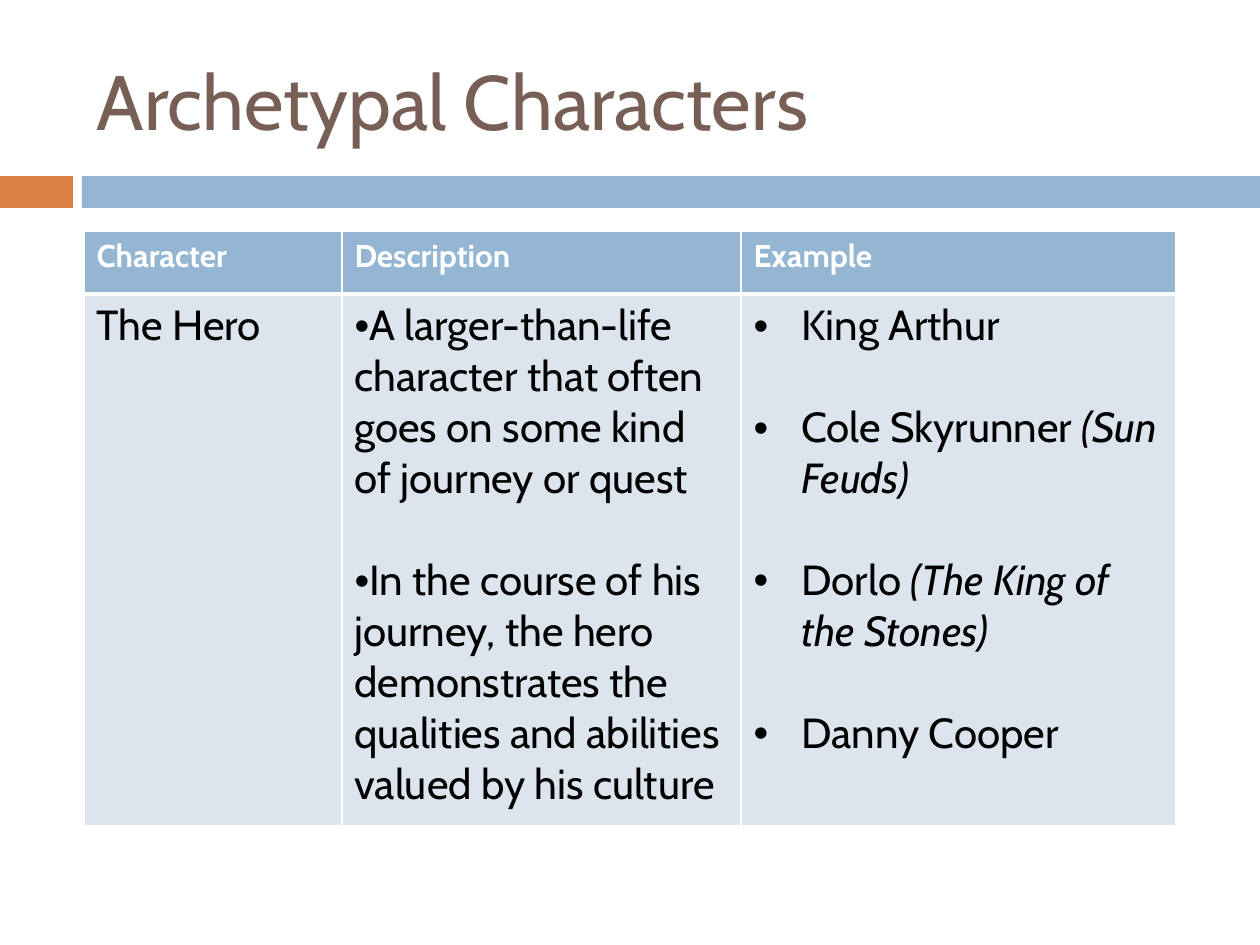
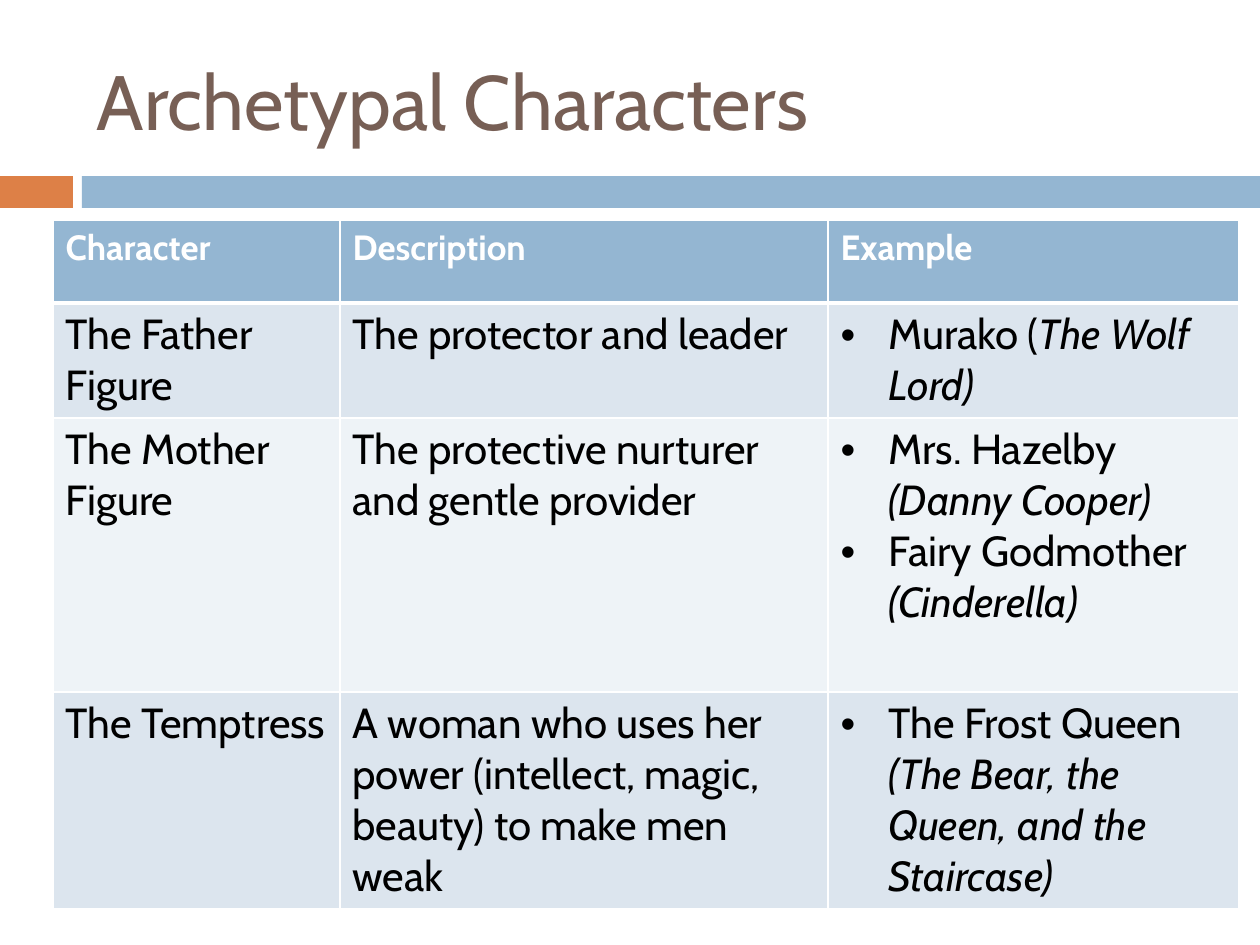
from lxml import etree
from pptx import Presentation
from pptx.dml.color import RGBColor
from pptx.enum.shapes import MSO_SHAPE
from pptx.enum.text import MSO_ANCHOR, MSO_AUTO_SIZE, PP_ALIGN
from pptx.oxml.ns import qn
from pptx.util import Pt

RECT = MSO_SHAPE.RECTANGLE
MIDDLE = MSO_ANCHOR.MIDDLE
LEFT = PP_ALIGN.LEFT
NO_FIT = MSO_AUTO_SIZE.NONE

WHITE = RGBColor(0xFF, 0xFF, 0xFF)
BLACK = RGBColor(0x00, 0x00, 0x00)
BROWN = RGBColor(0x77, 0x5F, 0x55)
ORANGE = RGBColor(0xDD, 0x80, 0x47)
BLUE = RGBColor(0x94, 0xB6, 0xD2)
TINTS = RGBColor(0xDC, 0xE5, 0xEE), RGBColor(0xEE, 0xF3, 0xF7)

FONT = "Cabin"
SCALE = 914400 / 126
HANG = 48
HEADS = ["Character", "Description", "Example"]


def emu(px):
    return round(px * SCALE)


def bullet(para, hang):
    props = para._p.get_or_add_pPr()
    props.set("marL", str(emu(hang)))
    props.set("indent", str(-emu(hang)))
    etree.SubElement(props, qn("a:buFont")).set("typeface", "Arial")
    etree.SubElement(props, qn("a:buChar")).set("char", "•")


def write(frame, paras, size, color, bold=False, bullets=False, hang=0, gap=0):
    """Fill a text frame; words between underscores become italic."""
    for i, text in enumerate(paras):
        para = frame.add_paragraph() if i else frame.paragraphs[0]
        para.alignment = LEFT
        if i and gap:
            para.space_before = Pt(gap)
        if bullets:
            bullet(para, hang)
        for j, part in enumerate(text.split("_")):
            if not part:
                continue
            run = para.add_run()
            run.text = part
            font = run.font
            font.name, font.size, font.bold = FONT, Pt(size), bold
            font.italic = j % 2 == 1
            font.color.rgb = color


def edge(cell, **widths):
    """Draw white cell borders; widths in points by side L, R, T, B."""
    props = cell._tc.get_or_add_tcPr()
    for i, side in enumerate("LRTB"):
        line = etree.Element(qn(f"a:ln{side}"), w=str(Pt(widths.get(side, 1))))
        fill = etree.SubElement(line, qn("a:solidFill"))
        etree.SubElement(fill, qn("a:srgbClr")).set("val", str(WHITE))
        props.insert(i, line)


class Deck:
    def __init__(self, wide, high):
        self.prs = Presentation()
        self.prs.slide_width, self.prs.slide_height = emu(wide), emu(high)
        self.slide = None

    def start(self, title):
        self.slide = self.prs.slides.add_slide(self.prs.slide_layouts[5])
        self.band(0, 73, ORANGE)
        self.band(82, 1178, BLUE)
        self.title(title)

    def band(self, left, width, color):
        shape = self.slide.shapes.add_shape(
            RECT, emu(left), emu(176), emu(width), emu(32))
        shape.shadow.inherit = False
        shape.fill.solid()
        shape.fill.fore_color.rgb = color
        shape.line.fill.background()

    def title(self, text):
        shape = self.slide.shapes.title
        shape.left, shape.top = emu(84), emu(32)
        shape.width, shape.height = emu(1124), emu(136)
        frame = shape.text_frame
        frame.auto_size, frame.vertical_anchor = NO_FIT, MIDDLE
        write(frame, [text], size=44, color=BROWN)

    def table(self, left, top, cols, rows, data, head, gap=0):
        """Add a table; a list in a cell becomes bullets, hung in the last column."""
        table = self.slide.shapes.add_table(
            len(rows), len(cols), emu(left), emu(top),
            emu(sum(cols)), emu(sum(rows))).table
        for col, width in zip(table.columns, cols):
            col.width = emu(width)
        for row, height in zip(table.rows, rows):
            row.height = emu(height)
        for r, line in enumerate([HEADS] + data):
            for c, item in enumerate(line):
                cell = table.cell(r, c)
                cell.fill.solid()
                if r == 0:
                    cell.fill.fore_color.rgb = BLUE
                    edge(cell, B=3)
                    write(cell.text_frame, [item], size=head, color=WHITE, bold=True)
                    continue
                cell.fill.fore_color.rgb = TINTS[(r - 1) % 2]
                edge(cell, T=3 if r == 1 else 1)
                listed = isinstance(item, list)
                write(cell.text_frame, item if listed else [item],
                      size=24, color=BLACK, bullets=listed,
                      hang=HANG if c == len(cols) - 1 else 0, gap=gap)


def main():
    deck = Deck(1260, 945)

    deck.start("Archetypal Characters")
    deck.table(84, 231, [258, 399, 435], [63, 532], [
        ["The Hero",
         ["A larger-than-life character that often goes on some kind of "
          "journey or quest",
          "In the course of his journey, the hero demonstrates the qualities "
          "and abilities valued by his culture"],
         ["King Arthur", "Cole Skyrunner _(Sun Feuds)_",
          "Dorlo _(The King of the Stones)_", "Danny Cooper"]],
    ], head=18, gap=29)

    deck.start("Archetypal Characters")
    deck.table(53, 220, [287, 488, 411], [83, 115, 274, 217], [
        ["The Father Figure", "The protector and leader",
         ["Murako (_The Wolf Lord)_"]],
        ["The Mother Figure", "The protective nurturer and gentle provider",
         ["Mrs. Hazelby _(Danny Cooper)_", "Fairy Godmother _(Cinderella)_"]],
        ["The Temptress",
         "A woman who uses her power (intellect, magic, beauty) to make men weak",
         ["The Frost Queen _(The Bear, the Queen, and the Staircase)_"]],
    ], head=20)

    deck.prs.save("out.pptx")


if __name__ == "__main__":
    main()
